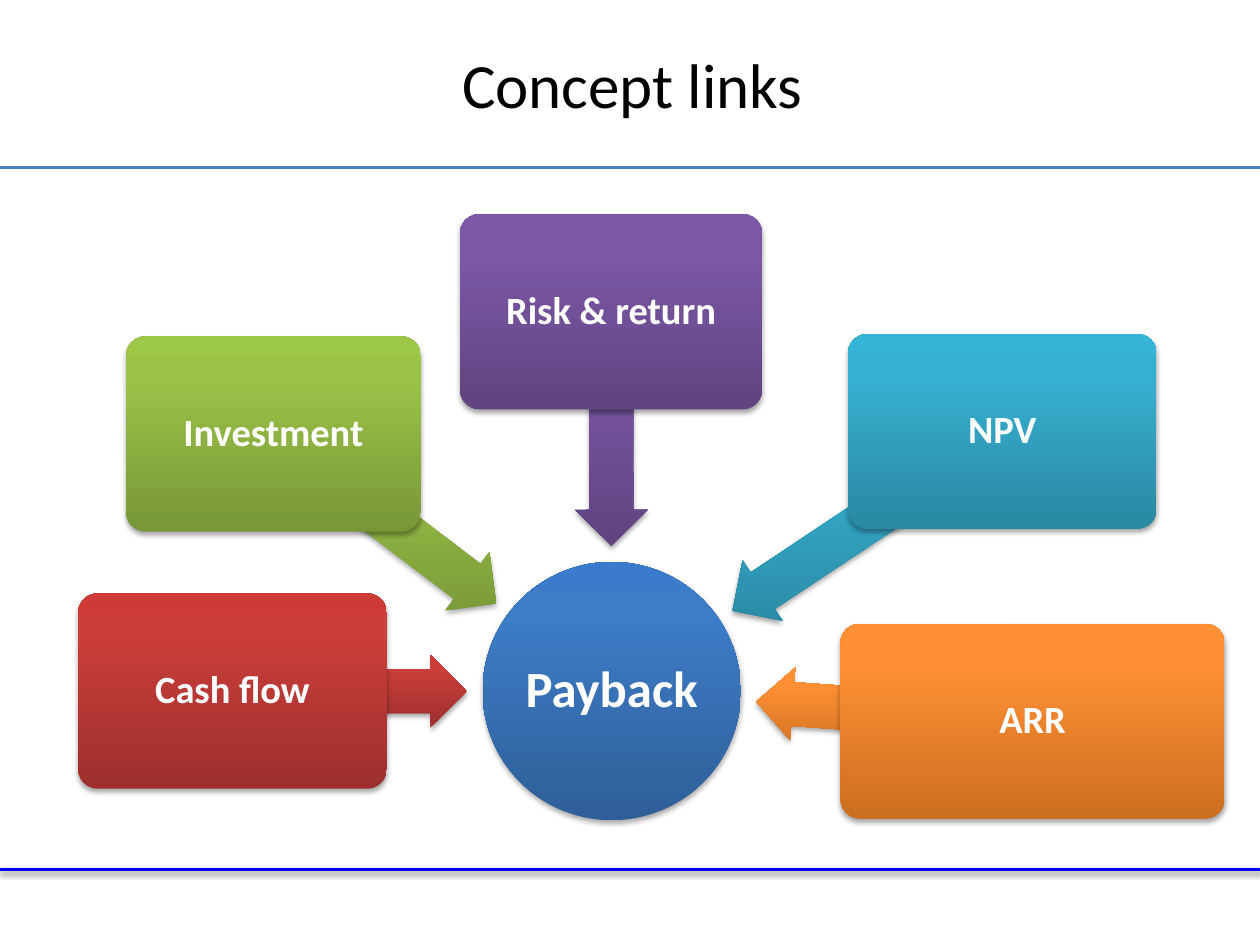
"""Build the 'Concept links' slide: five ideas pointing at Payback."""
from dataclasses import dataclass
from math import atan2, degrees, hypot

from lxml.etree import SubElement
from pptx import Presentation
from pptx.dml.color import RGBColor
from pptx.enum.shapes import MSO_CONNECTOR as Connector, MSO_SHAPE as Shape
from pptx.enum.text import MSO_ANCHOR as Anchor, PP_ALIGN as Align
from pptx.oxml.ns import qn
from pptx.util import Inches, Pt

TITLE = "Concept links"
HUB = ("Payback", 3.83, 4.46, 2.05, 2.05)
CONCEPTS = [
    ("Cash flow", "red", 0.62, 4.71, 2.45),
    ("Investment", "green", 1.0, 2.67, 2.34),
    ("Risk & return", "purple", 3.65, 1.7, 2.4),
    ("NPV", "teal", 6.73, 2.65, 2.45),
    ("ARR", "orange", 6.67, 4.95, 3.05),
]
RULES = [(1.33, "4B7EBC", 1.75, False), (6.9, "0000FF", 2, True)]
GRADIENTS = {
    "blue": ("2F5F99", "3D7CC7", "3A7CCB"),
    "red": ("9C2F2D", "CB3E3A", "CE3B37"),
    "green": ("779737", "9BC348", "9DC746"),
    "purple": ("5F4480", "7B58A6", "7C57A8"),
    "teal": ("2A88A2", "37B1D2", "34B4D6"),
    "orange": ("CC6E20", "FF9034", "FF9136"),
}
BOX_HEIGHT = 1.55
ARROW_HEIGHT = 0.58
TIP_TO_HUB_CENTRE = 1.15


@dataclass(frozen=True)
class Theme:
    font: str = "Calibri"
    title_size: int = 36
    hub_size: int = 29
    box_size: int = 22
    title_color: str = "000000"
    label_color: str = "FFFFFF"
    shadow_color: str = "000000"


THEME = Theme()


def add_shadow(effects, opacity, distance):
    shadow = SubElement(effects, qn("a:outerShdw"), blurRad=str(Pt(3.1)),
                        dist=str(Pt(distance)), dir="5400000", rotWithShape="0")
    color = SubElement(shadow, qn("a:srgbClr"), val=THEME.shadow_color)
    SubElement(color, qn("a:alpha"), val=str(opacity * 1000))


def add_block(slide, kind, gradient, left, top, width, height):
    block = slide.shapes.add_shape(kind, Inches(left), Inches(top), Inches(width), Inches(height))
    block.line.fill.background()
    block.fill.background()
    properties = block._element.spPr
    empty_fill = properties.find(qn("a:noFill"))
    fill = SubElement(properties, qn("a:gradFill"), rotWithShape="0")
    properties.replace(empty_fill, fill)
    stops = SubElement(fill, qn("a:gsLst"))
    for position, color in zip((0, 80, 100), GRADIENTS[gradient]):
        stop = SubElement(stops, qn("a:gs"), pos=str(position * 1000))
        SubElement(stop, qn("a:srgbClr"), val=color)
    SubElement(fill, qn("a:lin"), ang="16200000", scaled="0")
    block.shadow.inherit = False
    add_shadow(properties.find(qn("a:effectLst")), 35, 1.8)
    return block


def set_text(shape, text, size, color, bold):
    frame = shape.text_frame
    frame.text = text
    frame.word_wrap = True
    frame.vertical_anchor = Anchor.MIDDLE
    para = frame.paragraphs[0]
    para.alignment = Align.CENTER
    font = para.runs[0].font
    font.name, font.size, font.bold = THEME.font, Pt(size), bold
    font.color.rgb = RGBColor.from_string(color)


def set_label(shape, text, size, inset):
    set_text(shape, text, size, THEME.label_color, True)
    frame = shape.text_frame
    frame.margin_left = frame.margin_right = Inches(inset)
    frame.margin_top = frame.margin_bottom = Inches(inset)
    frame.paragraphs[0].line_spacing = 0.9


def add_rule(slide, top, color, weight, shadowed):
    rule = slide.shapes.add_connector(Connector.STRAIGHT, 0, Inches(top), Inches(10), Inches(top))
    rule.line.color.rgb = RGBColor.from_string(color)
    rule.line.width = Pt(weight)
    effects = SubElement(rule._element.spPr, qn("a:effectLst"))
    if shadowed:
        add_shadow(effects, 38, 1.6)


def add_arrow(slide, gradient, start, hub_centre):
    dx, dy = hub_centre[0] - start[0], hub_centre[1] - start[1]
    distance = hypot(dx, dy)
    length = distance - TIP_TO_HUB_CENTRE
    middle_x = start[0] + dx * length / distance / 2
    middle_y = start[1] + dy * length / distance / 2
    arrow = add_block(slide, Shape.LEFT_ARROW, gradient, middle_x - length / 2,
                      middle_y - ARROW_HEIGHT / 2, length, ARROW_HEIGHT)
    arrow.adjustments[0], arrow.adjustments[1] = 0.6, 0.5
    arrow.rotation = round(degrees(atan2(-dy, -dx)) % 360, 1)


def main():
    deck = Presentation()
    deck.slide_width, deck.slide_height = Inches(10), Inches(7.5)
    slide = deck.slides.add_slide(deck.slide_layouts[5])
    for rule in RULES:
        add_rule(slide, *rule)

    title = slide.shapes.title
    title.left, title.top = Inches(0.12), Inches(0.08)
    title.width, title.height = Inches(9.8), Inches(1.17)
    set_text(title, TITLE, THEME.title_size, THEME.title_color, False)

    name, left, top, width, height = HUB
    hub = add_block(slide, Shape.OVAL, "blue", left, top, width, height)
    set_label(hub, name, THEME.hub_size, 0.02)
    hub_centre = (left + width / 2, top + height / 2)

    for name, gradient, left, top, width in CONCEPTS:
        add_arrow(slide, gradient, (left + width / 2, top + BOX_HEIGHT / 2), hub_centre)
        box = add_block(slide, Shape.ROUNDED_RECTANGLE, gradient, left, top, width, BOX_HEIGHT)
        box.adjustments[0] = 0.1
        set_label(box, name, THEME.box_size, 0.05)

    deck.save("out.pptx")


if __name__ == "__main__":
    main()
